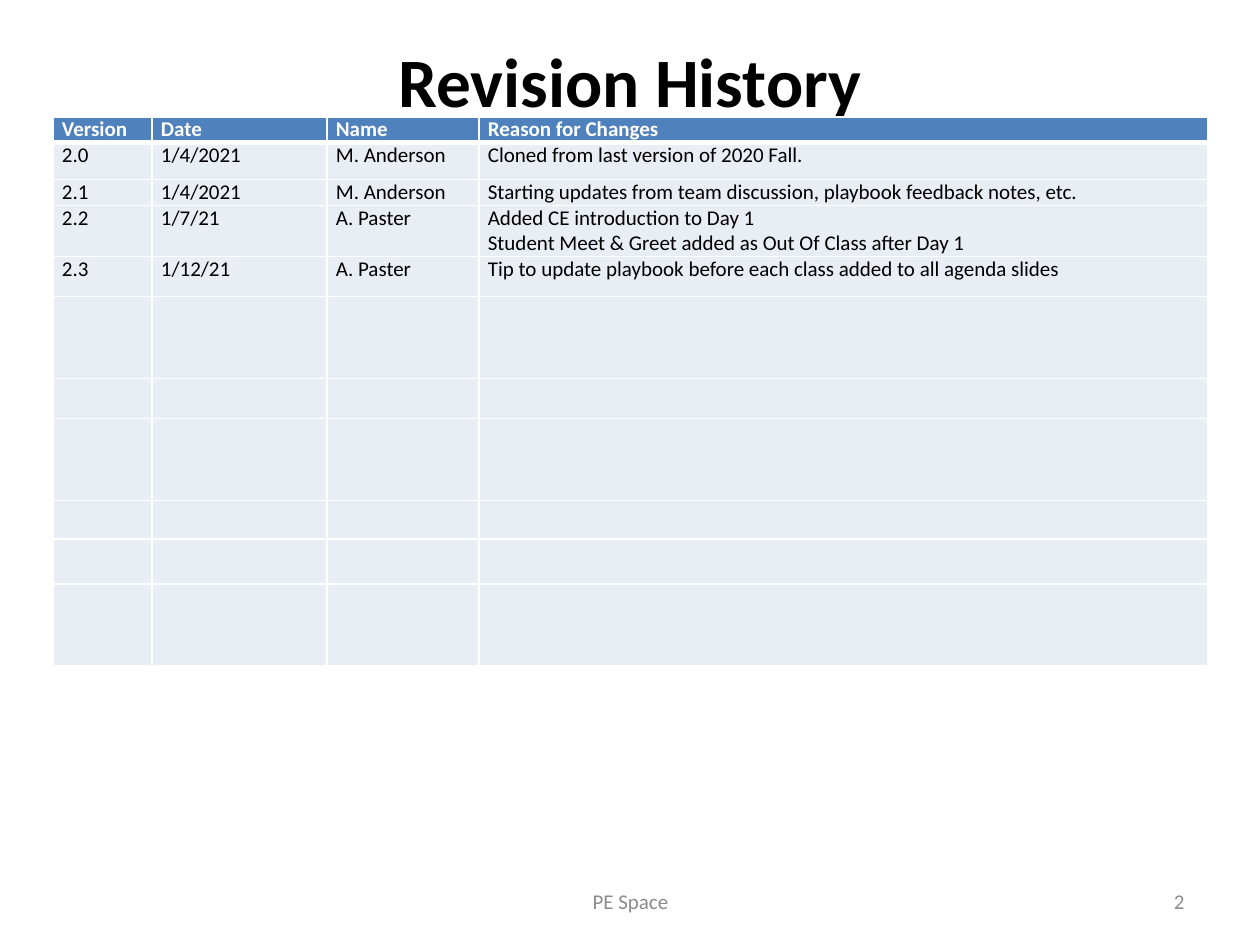
from lxml import etree
from pptx import Presentation
from pptx import util as u
from pptx.dml.color import RGBColor
from pptx.enum import text
from pptx.oxml.ns import qn

PX = 914400 // 126  # EMU in one px
HEADER = ["Version", "Date", "Name", "Reason for Changes"]
REVISIONS = [
    ["2.0", "1/4/2021", "M. Anderson", "Cloned from last version of 2020 Fall."],
    ["2.1", "1/4/2021", "M. Anderson",
     "Starting updates from team discussion, playbook feedback notes, etc."],
    ["2.2", "1/7/21", "A. Paster",
     "Added CE introduction to Day 1\n"
     "Student Meet & Greet added as Out Of Class after Day 1"],
    ["2.3", "1/12/21", "A. Paster",
     "Tip to update playbook before each class added to all agenda slides"],
]
COL_WIDTHS = [99, 175, 152, 729]
ROW_HEIGHTS = [25, 37, 25, 51, 40, 82, 40, 82, 38, 45, 82]


def px(*lengths):
    return [u.Emu(n * PX) for n in lengths]


def rgb(color):
    return RGBColor.from_string(color)


def write(tf, words, size, color, bold=False, align=text.PP_ALIGN.LEFT, **frame):
    tf.text = words
    for name, value in {"word_wrap": True, **frame}.items():
        setattr(tf, name, value)
    for p in tf.paragraphs:
        p.alignment = align
        for r in p.runs:
            for name, value in dict(name="Calibri", size=u.Pt(size), bold=bold).items():
                setattr(r.font, name, value)
            r.font.color.rgb = rgb(color)


def add_title(s, box, words):
    title = s.shapes.title
    title.left, title.top, title.width, title.height = px(*box)
    write(title.text_frame, words, 39.6, "000000", True, text.PP_ALIGN.CENTER,
          vertical_anchor=text.MSO_ANCHOR.TOP, margin_top=0,
          auto_size=text.MSO_AUTO_SIZE.NONE)


def set_borders(cell, color, **widths):
    """Draw the borders L, R, T and B; call before filling the cell."""
    tc_pr = cell._tc.get_or_add_tcPr()
    for side in "LRTB":
        ln = etree.SubElement(tc_pr, qn(f"a:ln{side}"),
                              w=str(u.Pt(widths.get(side, 1))))
        fill = etree.SubElement(ln, qn("a:solidFill"))
        etree.SubElement(fill, qn("a:srgbClr"), val=color)


def add_history(s, box):
    table = s.shapes.add_table(len(ROW_HEIGHTS), len(COL_WIDTHS), *px(*box)).table
    for col, width in zip(table.columns, px(*COL_WIDTHS)):
        col.width = width
    for row, height in zip(table.rows, px(*ROW_HEIGHTS)):
        row.height = height

    blank_rows = len(ROW_HEIGHTS) - 1 - len(REVISIONS)
    contents = [HEADER, *REVISIONS] + [[""] * len(HEADER)] * blank_rows
    for i, (row, words) in enumerate(zip(table.rows, contents)):
        is_header = i == 0
        for cell, word in zip(row.cells, words):
            set_borders(cell, "FFFFFF", T=3 if i == 1 else 1, B=3 if is_header else 1)
            cell.fill.solid()
            cell.fill.fore_color.rgb = rgb("4F81BD" if is_header else "E9EDF4")
            cell.margin_left, cell.margin_right = px(9, 9)
            cell.margin_top = cell.margin_bottom = 0
            write(cell.text_frame, word, 12, "FFFFFF" if is_header else "000000",
                  is_header)


def add_footer(s, box, words, align):
    sp = s.shapes.add_textbox(*px(*box))
    write(sp.text_frame, words, 12, "8C8C8C", align=align,
          vertical_anchor=text.MSO_ANCHOR.MIDDLE)


def main():
    prs = Presentation()
    prs.slide_width, prs.slide_height = u.Inches(10), u.Inches(7.5)
    s = prs.slides.add_slide(prs.slide_layouts[5])
    add_title(s, (63, 38, 1134, 157), "Revision History")
    add_history(s, (53, 117, sum(COL_WIDTHS), sum(ROW_HEIGHTS)))
    add_footer(s, (431, 876, 399, 50), "PE Space", text.PP_ALIGN.CENTER)
    add_footer(s, (903, 876, 294, 50), "2", text.PP_ALIGN.RIGHT)
    prs.save("out.pptx")


if __name__ == "__main__":
    main()
